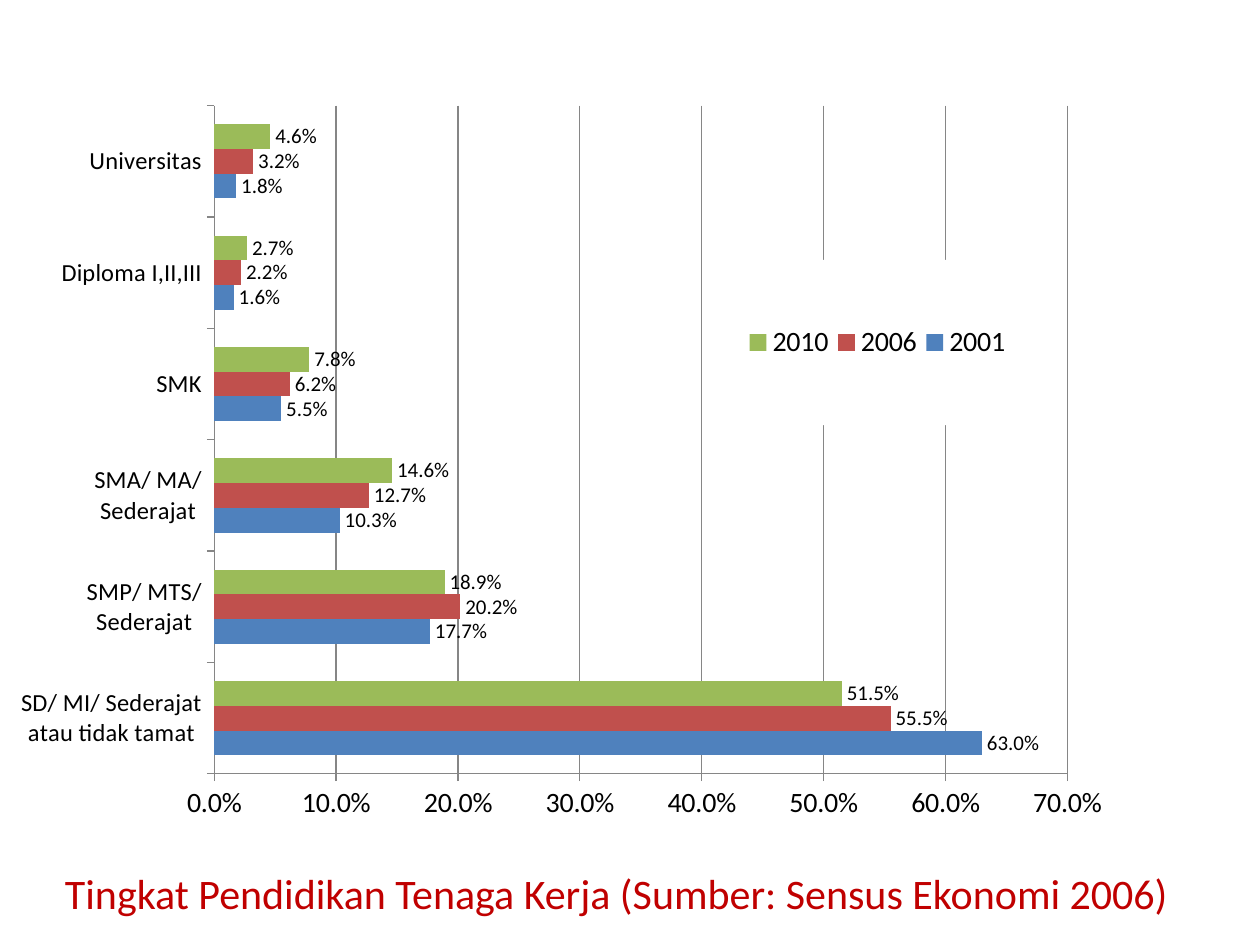
"""Build a slide with a bar chart of workforce education levels."""
from dataclasses import dataclass

from lxml.etree import fromstring
from pptx import Presentation
from pptx.chart.data import CategoryChartData
from pptx.dml.color import RGBColor
from pptx.enum.chart import XL_CHART_TYPE, XL_LABEL_POSITION, XL_LEGEND_POSITION, XL_TICK_MARK
from pptx.enum.text import MSO_AUTO_SIZE, PP_ALIGN
from pptx.util import Pt

NS = "http://schemas.openxmlformats.org/drawingml/2006/chart"
DML = "http://schemas.openxmlformats.org/drawingml/2006/main"


@dataclass(frozen=True)
class Theme:
    font: str = "Calibri"
    ink: str = "000000"
    title: str = "C00000"
    grid: str = "868686"
    paper: str = "FFFFFF"
    bars: tuple = ("4F81BD", "C0504D", "9BBB59")
    head: int = 24
    axis: int = 16
    group: int = 14
    label: int = 12


def style(font, name, size, color):
    font.name, font.size, font.bold = name, Pt(size), False
    font.color.rgb = RGBColor.from_string(color)


def write(frame, text, *, name, size, color, align=PP_ALIGN.LEFT):
    para = frame.paragraphs[0]
    para.alignment = align
    run = para.add_run()
    run.text = text
    style(run.font, name, size, color)


def layout(x, y, w, h, inner=False):
    target = '<c:layoutTarget val="inner"/>' if inner else ""
    sizes = "".join(f'<c:{key} val="{val}"/>' for key, val in zip("xywh", (x, y, w, h)))
    return fromstring(
        f'<c:layout xmlns:c="{NS}"><c:manualLayout>{target}'
        f'<c:xMode val="edge"/><c:yMode val="edge"/>{sizes}</c:manualLayout></c:layout>')


def place(parent, index, box):
    for old in parent.findall(f"{{{NS}}}layout"):
        parent.remove(old)
    parent.insert(index, box)


class Deck:
    def __init__(self, theme):
        self.theme = theme
        self.file = Presentation()
        self.file.slide_width, self.file.slide_height = Pt(720), Pt(540)
        self.slide = self.file.slides.add_slide(self.file.slide_layouts[6])

    def text(self, text, x, y, w, h, **form):
        frame = self.slide.shapes.add_textbox(Pt(x), Pt(y), Pt(w), Pt(h)).text_frame
        frame.word_wrap = True
        frame.auto_size = MSO_AUTO_SIZE.SHAPE_TO_FIT_TEXT
        write(frame, text, name=self.theme.font, **form)

    def chart(self, groups, series, x, y, w, h):
        data = CategoryChartData(number_format="0.0%")
        data.categories = groups
        for name, values in series.items():
            data.add_series(name, values)
        chart = self.slide.shapes.add_chart(
            XL_CHART_TYPE.BAR_CLUSTERED, Pt(x), Pt(y), Pt(w), Pt(h), data).chart
        chart.has_title = False
        style(chart.font, self.theme.font, self.theme.label, self.theme.ink)
        self.bars(chart.plots[0])
        self.axis(chart.category_axis, self.theme.group)
        self.axis(chart.value_axis, self.theme.axis)
        self.scale(chart.value_axis)
        self.legend(chart)
        area = chart.plots[0]._element.getparent()
        place(area, 0, layout(0.16, 0, 0.714, 0.91, inner=True))

    def bars(self, plot):
        plot.gap_width, plot.overlap, plot.vary_by_categories = 150, 0, False
        for row, color in zip(plot.series, self.theme.bars):
            row.format.fill.solid()
            row.format.fill.fore_color.rgb = RGBColor.from_string(color)
            labels = row.data_labels
            labels.show_value = True
            labels.position = XL_LABEL_POSITION.OUTSIDE_END
            labels.number_format, labels.number_format_is_linked = "0.0%", False
            style(labels.font, self.theme.font, self.theme.label, self.theme.ink)

    def line(self, part):
        part.color.rgb = RGBColor.from_string(self.theme.grid)
        part.width = Pt(0.75)

    def axis(self, axis, size):
        axis.major_tick_mark = XL_TICK_MARK.OUTSIDE
        axis.minor_tick_mark = XL_TICK_MARK.NONE
        self.line(axis.format.line)
        style(axis.tick_labels.font, self.theme.font, size, self.theme.ink)

    def scale(self, axis):
        axis.minimum_scale, axis.maximum_scale, axis.major_unit = 0, 0.7, 0.1
        axis.has_major_gridlines = True
        self.line(axis.major_gridlines.format.line)
        axis.tick_labels.number_format = "0.0%"
        axis.tick_labels.number_format_is_linked = False

    def legend(self, chart):
        chart.has_legend = True
        legend = chart.legend
        legend.position = XL_LEGEND_POSITION.RIGHT
        legend.include_in_layout = False
        style(legend.font, self.theme.font, self.theme.axis, self.theme.ink)
        node = legend._element
        place(node, 1, layout(0.6, 0.21, 0.23, 0.225))
        fill = fromstring(
            f'<c:spPr xmlns:c="{NS}" xmlns:a="{DML}"><a:solidFill>'
            f'<a:srgbClr val="{self.theme.paper}"/></a:solidFill></c:spPr>')
        node.find(f"{{{NS}}}txPr").addprevious(fill)

    def save(self):
        self.file.save("out.pptx")


def main():
    theme = Theme()
    deck = Deck(theme)
    groups = ("SD/ MI/ Sederajat atau tidak tamat", "SMP/ MTS/ Sederajat",
              "SMA/ MA/ Sederajat", "SMK", "Diploma I,II,III", "Universitas")
    series = {
        "2001": (0.63, 0.177, 0.103, 0.055, 0.016, 0.018),
        "2006": (0.555, 0.202, 0.127, 0.062, 0.022, 0.032),
        "2010": (0.515, 0.189, 0.146, 0.078, 0.027, 0.046),
    }
    deck.chart(groups, series, 12, 60, 684, 420)
    deck.text("Tingkat Pendidikan Tenaga Kerja (Sumber: Sensus Ekonomi 2006)",
              30, 492, 672, 36, size=theme.head, color=theme.title)
    deck.save()


if __name__ == "__main__":
    main()
